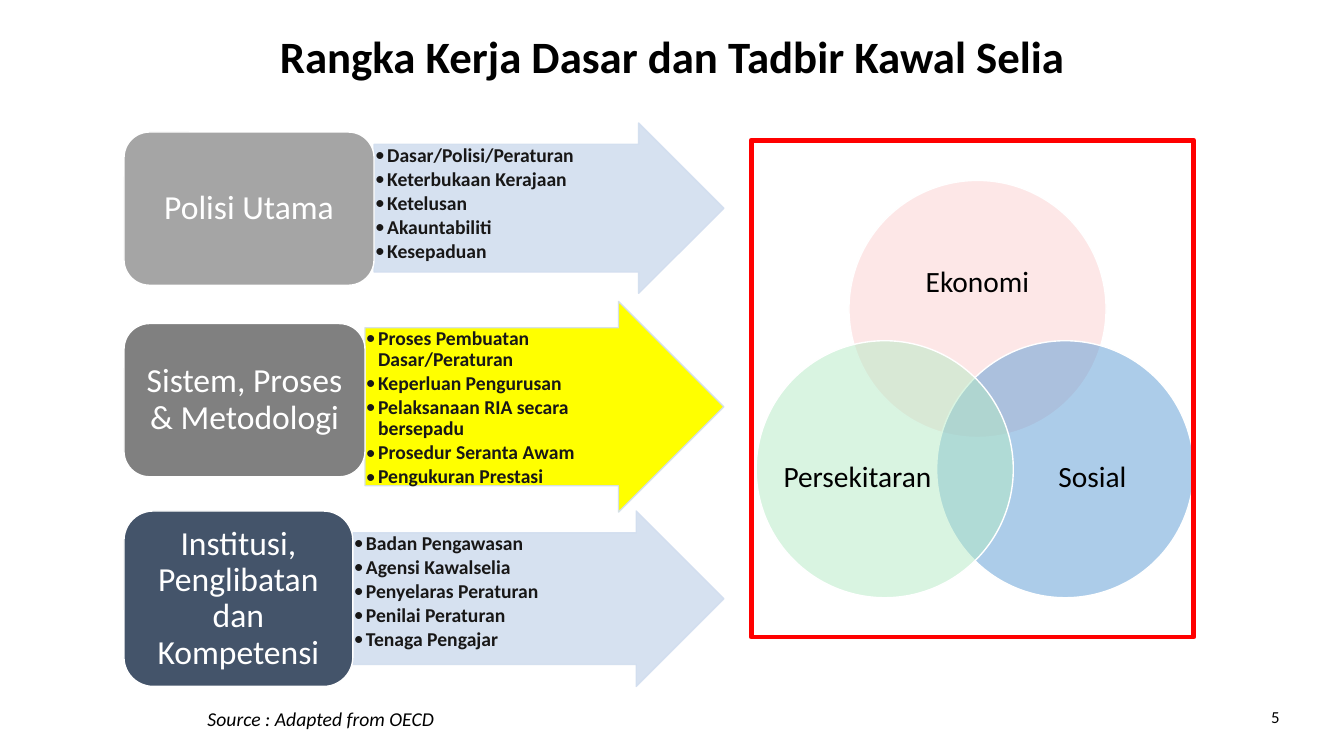
from pptx import Presentation
from pptx import util as u
from pptx.dml.color import RGBColor
from pptx.enum import shapes, text
from pptx.oxml.ns import qn
from lxml import etree

PX = 9144  # 100 px to the inch
FONT = "Calibri"
BLACK = RGBColor(0x00, 0x00, 0x00)
WHITE = RGBColor(0xFF, 0xFF, 0xFF)
INK = RGBColor(0x18, 0x17, 0x17)
RED = RGBColor(0xFF, 0x00, 0x00)
YELLOW = RGBColor(0xFF, 0xFF, 0x00)
PALE_BLUE = RGBColor(0xD2, 0xDE, 0xEF)
LIGHT_GREY = RGBColor(0xA5, 0xA5, 0xA5)
MID_GREY = RGBColor(0x80, 0x80, 0x80)
SLATE = RGBColor(0x44, 0x54, 0x6A)
PINK = RGBColor(0xFB, 0xA3, 0xA3)
BLUE = RGBColor(0x5B, 0x9B, 0xD5)
GREEN = RGBColor(0xB4, 0xEA, 0xC5)

CARD_LEFT, ARROW_RIGHT = 123, 718
# label, card colour, arrow colour, opacity, split x, card (top, height), arrow (top, height), points
PILLARS = [
    ("Polisi Utama", LIGHT_GREY, PALE_BLUE, 90, 371, (131, 152), (122, 169),
     ["Dasar/Polisi/Peraturan", "Keterbukaan Kerajaan", "Ketelusan",
      "Akauntabiliti", "Kesepaduan"]),
    ("Sistem, Proses & Metodologi", MID_GREY, YELLOW, 100, 362, (321, 152), (299, 209),
     ["Proses Pembuatan Dasar/Peraturan", "Keperluan Pengurusan",
      "Pelaksanaan RIA secara bersepadu", "Prosedur Seranta Awam",
      "Pengukuran Prestasi"]),
    ("Institusi, Penglibatan dan Kompetensi", SLATE, PALE_BLUE, 90, 350, (507, 174), (507, 174),
     ["Badan Pengawasan", "Agensi Kawalselia", "Penyelaras Peraturan",
      "Penilai Peraturan", "Tenaga Pengajar"]),
]
CIRCLE = 255
# label, colour, opacity, circle offset in the frame, label box in the circle
DOMAINS = [
    ("Ekonomi", PINK, 26, (97, 40), (34, 44, 187, 115)),
    ("Sosial", BLUE, 50, (184, 199), (78, 66, 153, 140)),
    ("Persekitaran", GREEN, 50, (5, 199), (24, 66, 153, 140)),
]


def apply(target, **formats):
    for name, value in formats.items():
        setattr(target, name, value)


def place(shape, box):
    apply(shape, **dict(zip(("left", "top", "width", "height"), (n * PX for n in box))))


def set_opacity(fill_parent, percent):
    color = fill_parent.find(qn("a:solidFill"))[0]
    etree.SubElement(color, qn("a:alpha")).set("val", str(percent * 1000))


def add_outline(slide, kind, box, fill, line, width=1, opacity=100):
    shape = slide.shapes.add_shape(kind, *(n * PX for n in box))
    shape.shadow.inherit = False
    if fill is None:
        shape.fill.background()
    else:
        shape.fill.solid()
        shape.fill.fore_color.rgb = fill
        if opacity < 100:
            set_opacity(shape._element.spPr, opacity)
    shape.line.color.rgb = line
    shape.line.width = u.Pt(width)
    return shape


def write(shape, lines, size, color, align=text.PP_ALIGN.LEFT, anchor=text.MSO_ANCHOR.TOP,
          inset=None, spacing=1.0, after=0, bullets=False, **font):
    frame = shape.text_frame
    apply(frame, word_wrap=True, auto_size=text.MSO_AUTO_SIZE.NONE, vertical_anchor=anchor)
    if inset is not None:
        apply(frame, **{"margin_" + side: inset * PX
                        for side in ("left", "top", "right", "bottom")})
    frame.text = "\n".join(lines)
    for paragraph in frame.paragraphs:
        apply(paragraph, alignment=align, line_spacing=spacing,
              space_before=u.Pt(0), space_after=u.Pt(after))
        if bullets:
            props = paragraph._p.get_or_add_pPr()
            props.set("marL", str(12 * PX))
            props.set("indent", str(-12 * PX))
            etree.SubElement(props, qn("a:buFont")).set("typeface", FONT)
            etree.SubElement(props, qn("a:buChar")).set("char", "•")
        apply(paragraph.font, name=FONT, size=u.Pt(size), **font)
        paragraph.font.color.rgb = color


def add_note(slide, box, words, size, color, **formats):
    note = slide.shapes.add_textbox(*(n * PX for n in box))
    write(note, [words], size, color, **formats)


def add_pillar(slide, points_holder, label, card_color, arrow_color, opacity, split,
               card_span, arrow_span, points):
    """Arrow with its list, and the card that meets it at the split."""
    top, height = arrow_span
    arrow = add_outline(slide, shapes.MSO_SHAPE.RIGHT_ARROW,
                        (split, top, ARROW_RIGHT - split, height),
                        arrow_color, PALE_BLUE, opacity=opacity)
    arrow.adjustments[0], arrow.adjustments[1] = 0.75, 0.5
    set_opacity(arrow.line._ln, 90)

    place(points_holder, (split, top + height // 8,
                          ARROW_RIGHT - split - height * 3 // 8, height * 3 // 4))
    slide.shapes._spTree.append(points_holder._element)
    write(points_holder, points, 14, INK, inset=1, spacing=0.9, after=2,
          bullets=True, bold=True)

    card = add_outline(slide, shapes.MSO_SHAPE.ROUNDED_RECTANGLE,
                       (CARD_LEFT, card_span[0], split - CARD_LEFT, card_span[1]),
                       card_color, WHITE)
    write(card, [label], 24, WHITE, align=text.PP_ALIGN.CENTER,
          anchor=text.MSO_ANCHOR.MIDDLE, spacing=0.9)


def add_venn(slide, box):
    left, top = box[:2]
    for label, color, opacity, (dx, dy), (lx, ly, width, height) in DOMAINS:
        x, y = left + dx, top + dy
        add_outline(slide, shapes.MSO_SHAPE.OVAL, (x, y, CIRCLE, CIRCLE),
                    color, WHITE, opacity=opacity)
        add_note(slide, (x + lx, y + ly, width, height), label, 21, BLACK,
                 align=text.PP_ALIGN.CENTER, anchor=text.MSO_ANCHOR.MIDDLE,
                 inset=0, spacing=0.9)
    add_outline(slide, shapes.MSO_SHAPE.RECTANGLE, box, None, RED, width=3.5)


def main():
    deck = Presentation()
    apply(deck, slide_width=1333 * PX, slide_height=750 * PX)
    slide = deck.slides.add_slide(deck.slide_layouts[4])
    title, *holders = slide.placeholders
    place(title, (167, 29, 1000, 70))
    write(title, ["Rangka Kerja Dasar dan Tadbir Kawal Selia"], 32, BLACK,
          align=text.PP_ALIGN.CENTER, spacing=0.9, bold=True)

    add_venn(slide, (745, 139, 439, 493))
    for holder, pillar in zip(holders, PILLARS):
        add_pillar(slide, holder, *pillar)
    for unused in holders[len(PILLARS):]:
        slide.shapes._spTree.remove(unused._element)

    add_note(slide, (196, 696, 430, 34), "Source : Adapted from OECD", 14, BLACK, italic=True)
    add_note(slide, (1251, 696, 70, 40), "5", 12, BLACK)
    deck.save("out.pptx")


if __name__ == "__main__":
    main()
